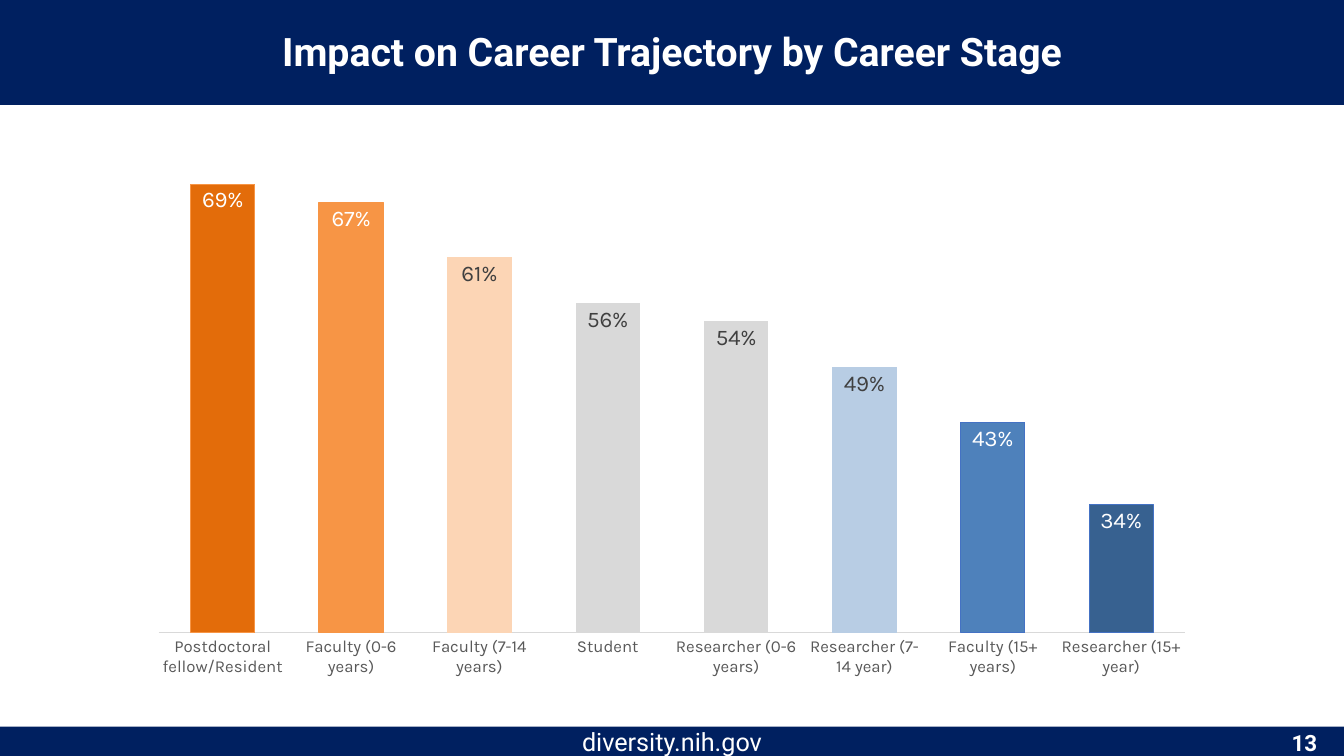
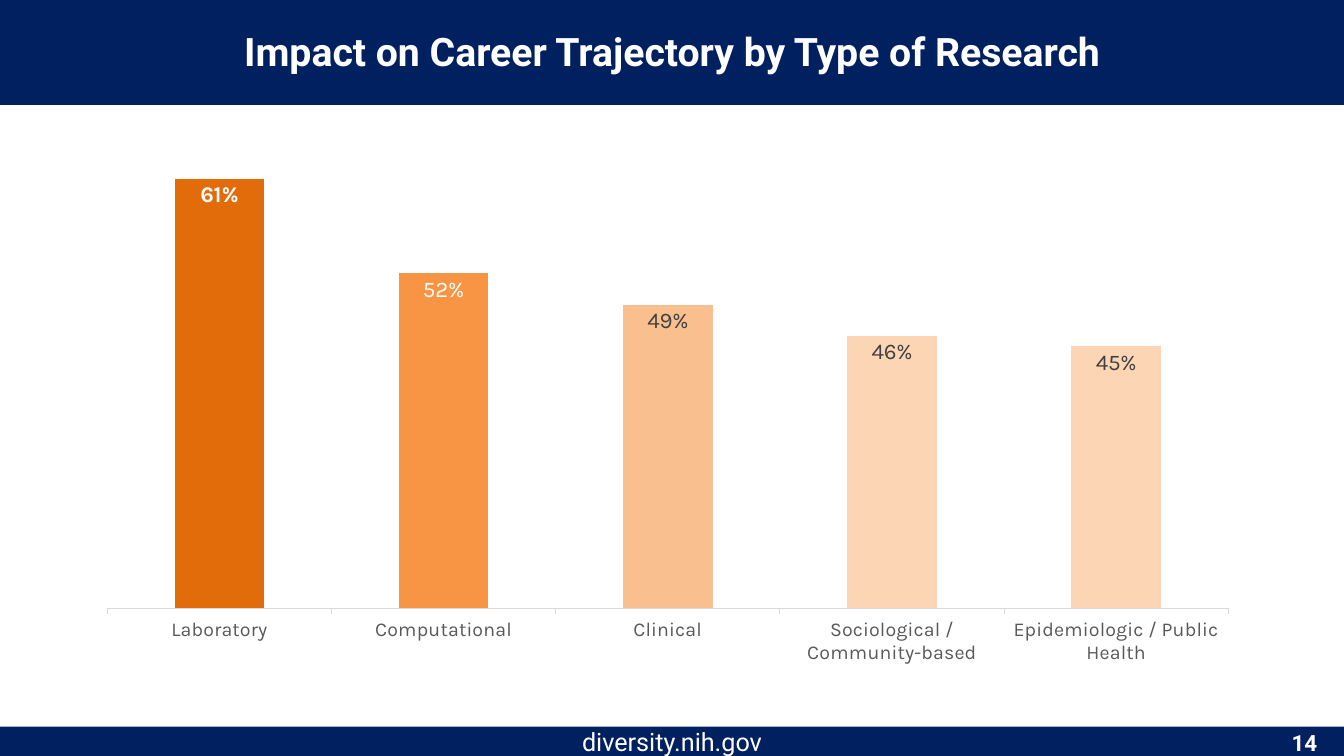
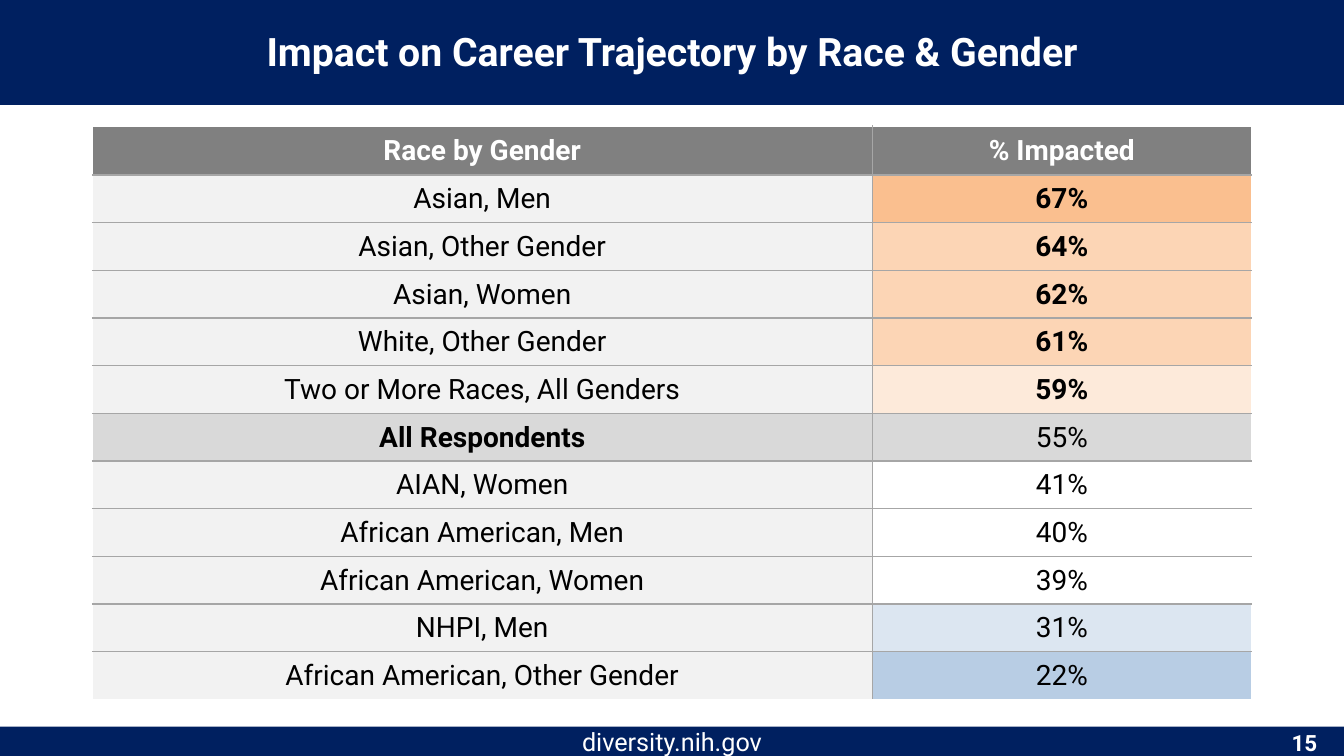
import dataclasses
import typing

import lxml.etree
import pptx
import pptx.chart.data
import pptx.dml.color
import pptx.dml.fill
import pptx.enum.chart
import pptx.enum.shapes
import pptx.enum.text
import pptx.oxml.ns
import pptx.shapes.base
import pptx.slide
import pptx.table
import pptx.text.text
import pptx.util

Pt = pptx.util.Pt
WIDTH, HEIGHT = 960, 540
NAVY, WHITE, BLACK = "002060", "FFFFFF", "000000"
AXIS_TEXT, LABEL_TEXT = "595959", "404040"
AXIS_LINE, TABLE_LINE = "D9D9D9", "A6A6A6"
HEADER_GREY, NAME_GREY, LIGHT_GREY = "808080", "F2F2F2", "D9D9D9"
DEEP_ORANGE, ORANGE, SOFT_ORANGE, PEACH, PALE_PEACH = "E36C0A", "F79545", "FABF8F", "FCD5B5", "FDEADA"
PALE_BLUE, SOFT_BLUE, BLUE, DEEP_BLUE, EDGE_BLUE = "DCE6F1", "B8CDE4", "4E81BB", "376190", "4472C4"
TEXT_FONT, CHART_FONT = "Roboto", "Karla"
ALIGN = pptx.enum.text.PP_ALIGN
ANCHOR = pptx.enum.text.MSO_ANCHOR


@dataclasses.dataclass(frozen=True)
class Area:
    """A rectangle in points."""

    left: float
    top: float
    width: float
    height: float

    def lengths(self) -> tuple:
        """Return the four sides as slide lengths."""
        return tuple(Pt(side) for side in dataclasses.astuple(self))


@dataclasses.dataclass(frozen=True)
class Bar:
    """One column of a chart."""

    category: str
    value: float
    fill: str
    label: str = LABEL_TEXT
    bold: bool = False
    outline: typing.Optional[str] = None


@dataclasses.dataclass(frozen=True)
class BarChart:
    """A column chart and its settings."""

    title: str
    area: Area
    bars: tuple
    gap: int
    maximum: float
    axis_size: float
    ticks: bool


@dataclasses.dataclass(frozen=True)
class Row:
    """One table row below the header."""

    name: str
    percent: str
    fill: str
    name_fill: str = NAME_GREY
    name_bold: bool = False
    percent_bold: bool = False


CHARTS = (
    BarChart(
        "Impact on Career Trajectory by Career Stage",
        Area(98, 117.5, 764, 373.5),
        (
            Bar("Postdoctoral fellow/Resident", 0.69, DEEP_ORANGE, WHITE, outline=ORANGE),
            Bar("Faculty (0-6 years)", 0.67, ORANGE, WHITE, outline=ORANGE),
            Bar("Faculty (7-14 years)", 0.61, PEACH),
            Bar("Student", 0.56, LIGHT_GREY),
            Bar("Researcher (0-6 years)", 0.54, LIGHT_GREY),
            Bar("Researcher (7-14 year)", 0.49, SOFT_BLUE),
            Bar("Faculty (15+ years)", 0.43, BLUE, WHITE, outline=EDGE_BLUE),
            Bar("Researcher (15+ year)", 0.34, DEEP_BLUE, WHITE, outline=EDGE_BLUE),
        ),
        gap=100,
        maximum=0.7,
        axis_size=12,
        ticks=False,
    ),
    BarChart(
        "Impact on Career Trajectory by Type of Research",
        Area(60, 90, 834, 392.5),
        (
            Bar("Laboratory", 0.61, DEEP_ORANGE, WHITE, bold=True),
            Bar("Computational", 0.52, ORANGE, WHITE),
            Bar("Clinical", 0.49, SOFT_ORANGE),
            Bar("Sociological / Community-based", 0.46, PEACH),
            Bar("Epidemiologic / Public Health", 0.45, PEACH),
        ),
        gap=150,
        maximum=0.65,
        axis_size=14,
        ticks=True,
    ),
)
TABLE_TITLE = "Impact on Career Trajectory by Race & Gender"
TABLE_HEADER = ("Race by Gender", "% Impacted")
TABLE_ROWS = (
    Row("Asian, Men", "67%", SOFT_ORANGE, percent_bold=True),
    Row("Asian, Other Gender", "64%", PEACH, percent_bold=True),
    Row("Asian, Women", "62%", PEACH, percent_bold=True),
    Row("White, Other Gender", "61%", PEACH, percent_bold=True),
    Row("Two or More Races, All Genders", "59%", PALE_PEACH, percent_bold=True),
    Row("All Respondents", "55%", LIGHT_GREY, LIGHT_GREY, name_bold=True),
    Row("AIAN, Women", "41%", WHITE),
    Row("African American, Men", "40%", WHITE),
    Row("African American, Women", "39%", WHITE),
    Row("NHPI, Men", "31%", PALE_BLUE),
    Row("African American, Other Gender", "22%", SOFT_BLUE),
)


def color(code: str) -> pptx.dml.color.RGBColor:
    """Turn a hex string into a colour."""
    return pptx.dml.color.RGBColor.from_string(code)


def paint(fill: pptx.dml.fill.FillFormat, code: str) -> None:
    """Set a solid fill."""
    fill.solid()
    fill.fore_color.rgb = color(code)


def style_font(font: pptx.text.text.Font, name: str, size: float, code: str, bold: bool = False) -> None:
    """Set typeface, size, colour and weight."""
    font.name = name
    font.size = Pt(size)
    font.color.rgb = color(code)
    font.bold = bold


def write(frame: pptx.text.text.TextFrame, text: str, size: float, code: str,
          bold: bool = False, align: ALIGN = ALIGN.CENTER) -> None:
    """Put one formatted line in a text frame."""
    frame.text = text
    para = frame.paragraphs[0]
    para.alignment = align
    for span in para.runs:
        style_font(span.font, TEXT_FONT, size, code, bold)


def add_band(page: pptx.slide.Slide, area: Area) -> pptx.shapes.base.BaseShape:
    """Draw a navy band."""
    band = page.shapes.add_shape(pptx.enum.shapes.MSO_SHAPE.RECTANGLE, *area.lengths())
    band.shadow.inherit = False
    paint(band.fill, NAVY)
    band.line.fill.background()
    return band


def add_page(deck: pptx.presentation.Presentation, title: str, number: int) -> pptx.slide.Slide:
    """Add a slide with its bands, title, footer and page number."""
    page = deck.slides.add_slide(deck.slide_layouts.get_by_name("Title Only"))
    footer = add_band(page, Area(0, 519, WIDTH, 21))
    footer.text_frame.vertical_anchor = ANCHOR.MIDDLE
    write(footer.text_frame, "diversity.nih.gov", 18, WHITE)

    box = page.shapes.add_textbox(*Area(732, 517, 216, 29).lengths())
    box.text_frame.word_wrap = True
    write(box.text_frame, str(number), 16, WHITE, True, ALIGN.RIGHT)

    add_band(page, Area(0, 0, WIDTH, 75))
    heading = page.shapes.title
    heading.left, heading.top, heading.width, heading.height = Area(0, 16, WIDTH, 41).lengths()
    heading.text_frame.vertical_anchor = ANCHOR.TOP
    heading.text_frame.auto_size = pptx.enum.text.MSO_AUTO_SIZE.SHAPE_TO_FIT_TEXT
    write(heading.text_frame, title, 28, WHITE, True)
    page.shapes.element.append(heading.element)
    return page


def add_bar_chart(page: pptx.slide.Slide, design: BarChart) -> None:
    """Draw a column chart with its own colour for each bar."""
    data = pptx.chart.data.CategoryChartData(number_format="0%")
    data.categories = [bar.category for bar in design.bars]
    data.add_series("Series 1", [bar.value for bar in design.bars])
    kind = pptx.enum.chart.XL_CHART_TYPE.COLUMN_CLUSTERED
    chart = page.shapes.add_chart(kind, *design.area.lengths(), data).chart
    chart.has_legend = False
    chart.has_title = False
    style_font(chart.font, CHART_FONT, 11, BLACK)

    values = chart.value_axis
    values.minimum_scale, values.maximum_scale = 0.2, design.maximum
    values.has_major_gridlines = False
    values.visible = False
    names = chart.category_axis
    marks = pptx.enum.chart.XL_TICK_MARK
    names.major_tick_mark = marks.OUTSIDE if design.ticks else marks.NONE
    names.format.line.color.rgb = color(AXIS_LINE)
    names.format.line.width = Pt(0.75)
    style_font(names.tick_labels.font, CHART_FONT, design.axis_size, AXIS_TEXT)

    plot = chart.plots[0]
    plot.vary_by_categories = False
    plot.gap_width, plot.overlap = design.gap, -27
    series = plot.series[0]
    series.invert_if_negative = False
    paint(series.format.fill, ORANGE)
    inside_end = pptx.enum.chart.XL_LABEL_POSITION.INSIDE_END
    labels = series.data_labels
    labels.show_value = True
    labels.position = inside_end
    labels.number_format = "0%"
    labels.number_format_is_linked = False
    style_font(labels.font, CHART_FONT, 16, LABEL_TEXT)

    for index, bar in enumerate(design.bars):
        point = series.points[index]
        paint(point.format.fill, bar.fill)
        if bar.outline:
            point.format.line.color.rgb = color(bar.outline)
            point.format.line.width = Pt(0.75)
        if bar.label != LABEL_TEXT:
            style_font(point.data_label.font, CHART_FONT, 16, bar.label, bar.bold)
            point.data_label.position = inside_end


def set_borders(cell: pptx.table._Cell, edges: dict) -> None:
    """Give a cell one-point borders, keyed by side."""
    qn = pptx.oxml.ns.qn
    properties = cell._tc.get_or_add_tcPr()
    for index, (side, code) in enumerate(edges.items()):
        line = lxml.etree.Element(qn(f"a:ln{side}"), w=str(Pt(1)))
        solid = lxml.etree.SubElement(line, qn("a:solidFill"))
        lxml.etree.SubElement(solid, qn("a:srgbClr"), val=code)
        properties.insert(index, line)


def fill_cell(cell: pptx.table._Cell, text: str, fill: str, code: str, bold: bool) -> None:
    """Write and colour one table cell."""
    paint(cell.fill, fill)
    cell.vertical_anchor = ANCHOR.MIDDLE
    write(cell.text_frame, text, 20, code, bold)


def add_impact_table(page: pptx.slide.Slide) -> None:
    """Draw the table of impact by race and gender."""
    count = len(TABLE_ROWS) + 1
    area = Area(66, 90, 828, 409.5)
    table = page.shapes.add_table(count, len(TABLE_HEADER), *area.lengths()).table
    table.horz_banding = False
    for column, width in zip(table.columns, (557, 271)):
        column.width = Pt(width)
    for index, line in enumerate(table.rows):
        line.height = Pt(34.05 if index else 35)

    for column, text in enumerate(TABLE_HEADER):
        fill_cell(table.cell(0, column), text, HEADER_GREY, WHITE, True)
    for index, row in enumerate(TABLE_ROWS, start=1):
        fill_cell(table.cell(index, 0), row.name, row.name_fill, BLACK, row.name_bold)
        fill_cell(table.cell(index, 1), row.percent, row.fill, BLACK, row.percent_bold)
        for cell in table.rows[index].cells:
            cell.margin_left = cell.margin_right = cell.margin_top = Pt(0.72)
            cell.margin_bottom = Pt(0)

    for index, line in enumerate(table.rows):
        for column, cell in enumerate(line.cells):
            set_borders(cell, {
                "L": TABLE_LINE if column else WHITE,
                "R": WHITE if column else TABLE_LINE,
                "T": TABLE_LINE if index else WHITE,
                "B": TABLE_LINE if index < count - 1 else WHITE,
            })


def main() -> None:
    """Build and save the deck."""
    deck = pptx.Presentation()
    deck.slide_width, deck.slide_height = Pt(WIDTH), Pt(HEIGHT)
    first = 13
    for number, design in enumerate(CHARTS, start=first):
        add_bar_chart(add_page(deck, design.title, number), design)
    add_impact_table(add_page(deck, TABLE_TITLE, first + len(CHARTS)))
    deck.save("out.pptx")


if __name__ == "__main__":
    main()
